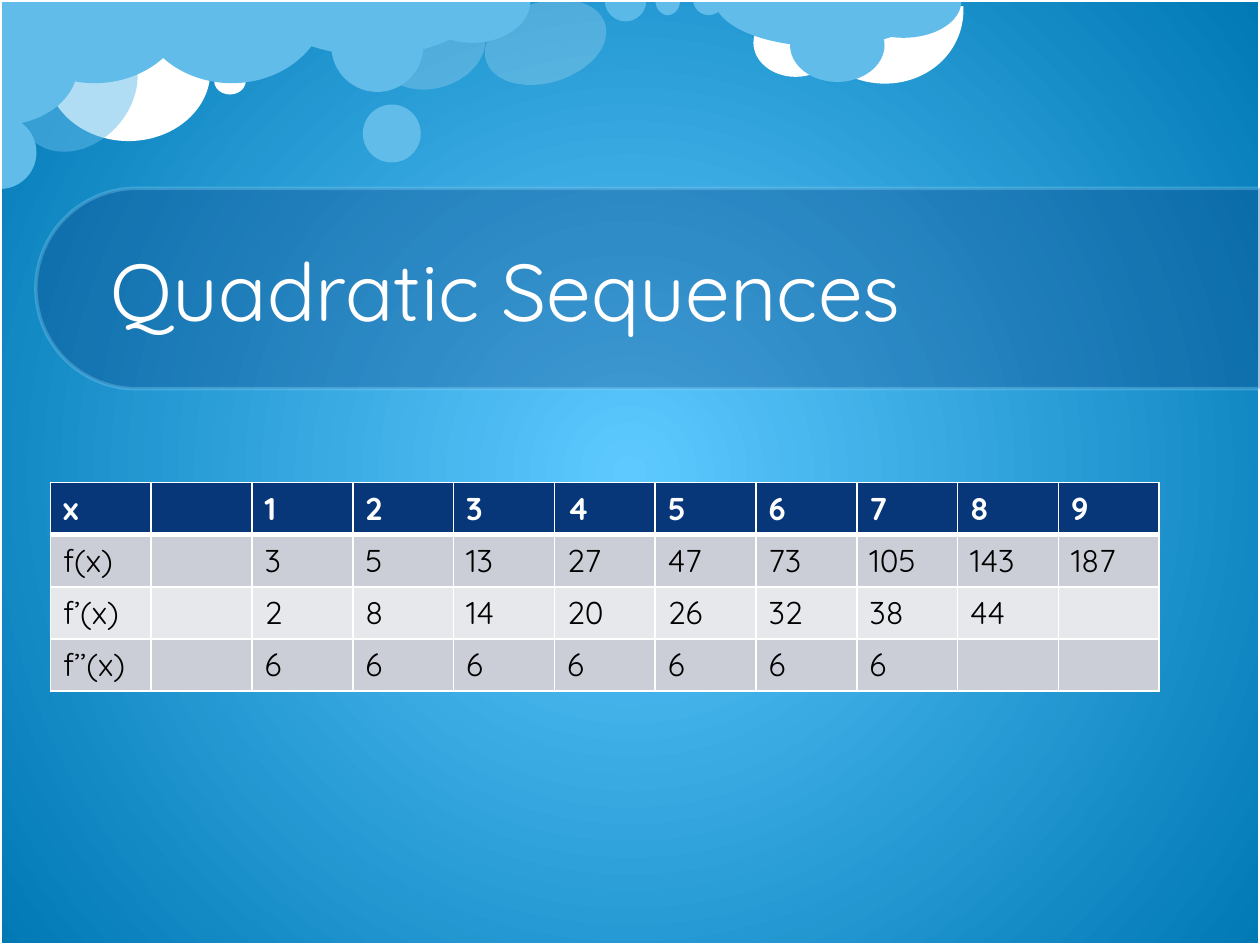
from dataclasses import dataclass
from typing import Optional

import pptx
import pptx.dml.color
import pptx.enum.shapes
import pptx.enum.text
import pptx.oxml
import pptx.oxml.ns
import pptx.util
from pptx.util import Inches

RGBColor = pptx.dml.color.RGBColor
SHAPE = pptx.enum.shapes.MSO_SHAPE
WHITE = RGBColor(0xFF, 0xFF, 0xFF)
BLACK = RGBColor(0x00, 0x00, 0x00)
CLOUD_BLUE = RGBColor(0x62, 0xBC, 0xE9)
PALE_BLUE = RGBColor(0x8F, 0xD9, 0xFB)
NAVY = RGBColor(0x07, 0x37, 0x79)
GLOW = RGBColor(0x5D, 0xC9, 0xFF)
DEEP_BLUE = RGBColor(0x00, 0x79, 0xB5)
BAND_DARK = RGBColor(0xCC, 0xCE, 0xD7)
BAND_LIGHT = RGBColor(0xE7, 0xE8, 0xEC)
FONT = "Quicksand"
HALF_DISC = (0, 108)  # angles in 60000ths of a degree, over 100000
ARC_SWEEP = (151.8, 44.48)


@dataclass
class Figure:
    kind: int
    left: float
    top: float
    width: float
    height: float
    fill: Optional[RGBColor] = CLOUD_BLUE
    opacity: int = 100
    rotation: float = 0
    adjust: tuple = ()
    line: Optional[RGBColor] = None
    line_opacity: int = 100


def ellipse(left, top, width, height, fill=CLOUD_BLUE, opacity=100, rotation=0) -> Figure:
    return Figure(SHAPE.OVAL, left, top, width, height, fill, opacity, rotation)


def half(left, top, width, height, fill=CLOUD_BLUE, opacity=100, rotation=0) -> Figure:
    return Figure(SHAPE.PIE, left, top, width, height, fill, opacity, rotation, HALF_DISC)


FIGURES = [
    # Clouds
    ellipse(3.11, -0.05, 0.64, 0.86, WHITE, 20, 72.8),
    ellipse(0.37, 0.01, 1.3, 1.11, WHITE),
    Figure(SHAPE.ARC, 6.39, -0.6, 1.21, 1.31, WHITE, rotation=106.5, adjust=ARC_SWEEP),
    ellipse(5.98, 0.07, 0.67, 0.54, WHITE),
    half(-0.01, -0.66, 1.52, 1.32),
    half(2.08, -0.44, 1.75, 0.88),
    ellipse(2.88, 0.83, 0.46, 0.46),
    ellipse(0.19, 0.18, 0.85, 1.07, opacity=50, rotation=41.8),
    half(-0.29, 0.92, 0.58, 0.58, rotation=270),
    ellipse(1.7, 0.54, 0.25, 0.21, WHITE),
    half(1.08, -0.66, 1.52, 1.32),
    half(5.67, -0.38, 1.75, 0.75),
    ellipse(6.27, 0.07, 0.75, 0.58),
    half(6.71, -0.28, 0.92, 0.58),
    ellipse(4.01, -0.16, 0.64, 0.99, WHITE, 20, 72.8),
    half(4.8, -0.16, 0.33, 0.33, PALE_BLUE, 50),
    half(5.2, -0.13, 0.2, 0.25),
    half(5.5, -0.13, 0.25, 0.25),
    ellipse(2.63, 0, 0.73, 0.73),
    half(3.29, -0.33, 0.92, 0.67),
    half(-0.47, -0.09, 0.93, 1.24, rotation=270),
    # Frame and title band
    Figure(SHAPE.RECTANGLE, 0, 0, 10, 7.5, None, line=WHITE),
    Figure(SHAPE.ROUND_2_SAME_RECTANGLE, 4.35, -2.57, 1.59, 9.72, NAVY, 30, 270,
           (0.5, 0), PALE_BLUE, 30),
]

ROWS = [
    ["x", "", *range(1, 10)],
    ["f(x)", "", 3, 5, 13, 27, 47, 73, 105, 143, 187],
    ["f’(x)", "", 2, 8, 14, 20, 26, 32, 38, 44, ""],
    ["f’’(x)", "", *[6] * 7, "", ""],
]
ROW_FILLS = [NAVY, BAND_DARK, BAND_LIGHT, BAND_DARK]


def set_opacity(parent, opacity: int) -> None:
    if opacity < 100:
        color = parent.find(".//" + pptx.oxml.ns.qn("a:srgbClr"))
        alpha = color.makeelement(pptx.oxml.ns.qn("a:alpha"), {"val": str(opacity * 1000)})
        color.append(alpha)


def draw_figure(page, figure: Figure) -> None:
    shape = page.shapes.add_shape(figure.kind, Inches(figure.left), Inches(figure.top),
                                  Inches(figure.width), Inches(figure.height))
    shape.shadow.inherit = False
    shape.rotation = figure.rotation
    for index, value in enumerate(figure.adjust):
        shape.adjustments[index] = value
    if figure.fill is None:
        shape.fill.background()
    else:
        shape.fill.solid()
        shape.fill.fore_color.rgb = figure.fill
        set_opacity(shape._element.spPr.find(pptx.oxml.ns.qn("a:solidFill")).getparent(),
                    figure.opacity)
    if figure.line is None:
        shape.line.fill.background()
    else:
        shape.line.color.rgb = figure.line
        shape.line.width = pptx.util.Pt(2)
        set_opacity(shape._element.spPr.find(pptx.oxml.ns.qn("a:ln")), figure.line_opacity)


def write(para, text: str, size: float, color: RGBColor, bold: bool = False) -> None:
    span = para.add_run()
    span.text = text
    formats = {"name": FONT, "size": pptx.util.Pt(size), "bold": bold}
    for name, value in formats.items():
        setattr(span.font, name, value)
    span.font.color.rgb = color


def set_borders(cell, widths: dict) -> None:
    for side, points in widths.items():
        cell._tc.get_or_add_tcPr().append(pptx.oxml.parse_xml(
            f'<a:ln{side} {pptx.oxml.ns.nsdecls("a")} w="{points * 12700}">'
            f'<a:solidFill><a:srgbClr val="{WHITE}"/></a:solidFill></a:ln{side}>'))


def draw_table(page) -> None:
    row_height = 0.41
    frame = page.shapes.add_table(len(ROWS), len(ROWS[0]), Inches(0.4), Inches(3.83),
                                  Inches(8.8), Inches(row_height * len(ROWS)))
    table = frame.table
    table.horz_banding = False
    for column in table.columns:
        column.width = Inches(0.8)
    for r, (values, fill) in enumerate(zip(ROWS, ROW_FILLS)):
        table.rows[r].height = Inches(row_height)
        header = r == 0
        for c, value in enumerate(values):
            cell = table.cell(r, c)
            set_borders(cell, {"L": 1, "R": 1, "T": 3 if r == 1 else 1, "B": 3 if header else 1})
            cell.fill.solid()
            cell.fill.fore_color.rgb = fill
            if value != "":
                write(cell.text_frame.paragraphs[0], str(value), 18,
                      WHITE if header else BLACK, header)


def draw_title(page) -> None:
    box = page.shapes.add_textbox(Inches(0.78), Inches(1.5), Inches(8.44), Inches(1.58))
    frame = box.text_frame
    frame.word_wrap = True
    frame.vertical_anchor = pptx.enum.text.MSO_ANCHOR.MIDDLE
    para = frame.paragraphs[0]
    para.line_spacing = pptx.util.Pt(56)
    write(para, "Quadratic Sequences", 46, WHITE)


def draw_background(page) -> None:
    fill = page.background.fill
    fill.gradient()
    for stop, color, position in zip(fill.gradient_stops, (GLOW, DEEP_BLUE), (0, 1)):
        stop.color.rgb = color
        stop.position = position
    linear = page._element.find(".//" + pptx.oxml.ns.qn("a:lin"))
    linear.getparent().replace(linear, pptx.oxml.parse_xml(
        f'<a:path {pptx.oxml.ns.nsdecls("a")} path="circle">'
        '<a:fillToRect l="50000" t="50000" r="50000" b="50000"/></a:path>'))


def main() -> None:
    deck = pptx.Presentation()
    deck.slide_width, deck.slide_height = Inches(10), Inches(7.5)
    page = deck.slides.add_slide(deck.slide_layouts[6])
    draw_background(page)
    for figure in FIGURES:
        draw_figure(page, figure)
    draw_table(page)
    draw_title(page)
    deck.save("out.pptx")


if __name__ == "__main__":
    main()
